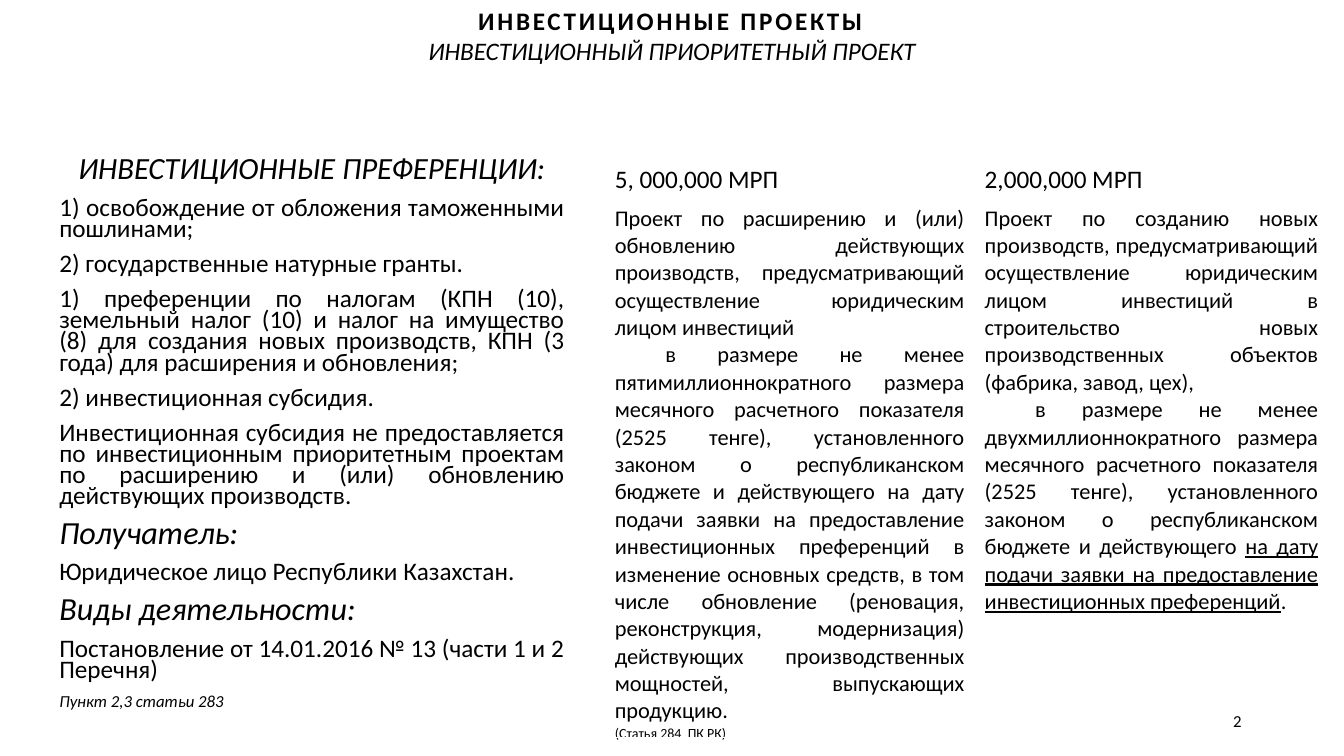
from pptx import Presentation
from pptx.dml.color import RGBColor
from pptx.enum.text import MSO_ANCHOR as Anchor, MSO_AUTO_SIZE as AutoSize, PP_ALIGN as Align
from pptx.util import Pt

COLORS = {"text": "000000"}
FONT = "Calibri"
BODY, CELL, SMALL = 18, 16, 12


def add_run(paragraph, text, size=BODY, bold=False, italic=False, underline=False, tracking=0):
    run = paragraph.add_run()
    run.text = text
    font = run.font
    font.name, font.size = FONT, Pt(size)
    font.bold, font.italic, font.underline = bold, italic, underline
    font.color.rgb = RGBColor.from_string(COLORS["text"])
    if tracking:
        run._r.get_or_add_rPr().set("spc", str(tracking * 100))


class SlideBuilder:
    def __init__(self, slide):
        self.slide = slide

    def fill_frame(self, frame, paragraphs, line_spacing=None, space_before=None):
        """Each paragraph is (alignment, [(text, format), ...])."""
        frame.word_wrap = True
        for index, (align, runs) in enumerate(paragraphs):
            paragraph = frame.add_paragraph() if index else frame.paragraphs[0]
            paragraph.alignment = align
            paragraph.line_spacing = line_spacing
            paragraph.space_before = space_before
            for text, style in runs:
                add_run(paragraph, text, **style)

    def title(self, box, heading, subheading):
        title = self.slide.shapes.title
        title.left, title.top, title.width, title.height = map(Pt, box)
        frame = title.text_frame
        frame.vertical_anchor = Anchor.TOP
        frame.auto_size = AutoSize.SHAPE_TO_FIT_TEXT
        self.fill_frame(frame, [(Align.CENTER, [(heading, dict(bold=True, tracking=2))])])
        paragraph = frame.paragraphs[0]
        paragraph.add_line_break()
        add_run(paragraph, subheading, italic=True)

    def text(self, box, paragraphs, anchor=Anchor.TOP, **spacing):
        frame = self.slide.shapes.add_textbox(*map(Pt, box)).text_frame
        frame.vertical_anchor = anchor
        self.fill_frame(frame, paragraphs, **spacing)

    def table(self, left, top, widths, heights, rows):
        table = self.slide.shapes.add_table(
            len(heights), len(widths), Pt(left), Pt(top), Pt(sum(widths)), Pt(sum(heights))
        ).table
        table.first_row = table.horz_banding = False
        for column, width in zip(table.columns, widths):
            column.width = Pt(width)
        for row, height, contents in zip(table.rows, heights, rows):
            row.height = Pt(height)
            for cell, paragraphs in zip(row.cells, contents):
                cell.fill.background()
                self.fill_frame(cell.text_frame, paragraphs)


def main():
    deck = Presentation()
    deck.slide_width, deck.slide_height = Pt(960), Pt(540)
    builder = SlideBuilder(deck.slides.add_slide(deck.slide_layouts[5]))

    # Title
    builder.title((240, 0, 480, 51), "ИНВЕСТИЦИОННЫЕ ПРОЕКТЫ", "ИНВЕСТИЦИОННЫЙ ПРИОРИТЕТНЫЙ ПРОЕКТ")

    # Preferences, recipient and activities
    plain = {}
    heading = dict(size=23, italic=True)
    preferences = [
        ("1) освобождение от обложения таможенными пошлинами;", plain),
        ("2) государственные натурные гранты.", plain),
        ("1) преференции по налогам (КПН (10), земельный налог (10) и налог на имущество (8) "
         "для создания новых производств, КПН (3 года) для расширения и обновления;", plain),
        ("2) инвестиционная субсидия.", plain),
        ("Инвестиционная субсидия не предоставляется по инвестиционным приоритетным проектам "
         "по расширению и (или) обновлению действующих производств.", plain),
        ("Получатель: ", heading),
        ("Юридическое лицо Республики Казахстан.", plain),
        ("Виды деятельности: ", heading),
        ("Постановление от 14.01.2016 № 13 (части 1 и 2 Перечня) ", plain),
        ("Пункт 2,3 статьи 283", dict(size=SMALL, italic=True)),
    ]
    builder.text(
        (35.3, 110.2, 375, 406),
        [(Align.CENTER, [("ИНВЕСТИЦИОННЫЕ ПРЕФЕРЕНЦИИ:", dict(size=22, italic=True))])]
        + [(Align.JUSTIFY, [line]) for line in preferences],
        line_spacing=0.7, space_before=Pt(10),
    )

    # Slide number
    builder.text((678, 500.5, 216, 28.8), [(Align.RIGHT, [("2", dict(size=SMALL))])], Anchor.MIDDLE)

    # Investment thresholds
    cell = dict(size=CELL)
    expansion = [
        (Align.JUSTIFY, [("Проект по расширению и (или) обновлению действующих производств, "
                          "предусматривающий осуществление юридическим лицом инвестиций ", cell)]),
        (Align.JUSTIFY, [("\tв размере не менее пятимиллионнократного размера месячного расчетного "
                          "показателя (2525 тенге), установленного законом о республиканском бюджете "
                          "и действующего на дату подачи заявки на предоставление инвестиционных "
                          "преференций в изменение основных средств, в том числе обновление "
                          "(реновация, реконструкция, модернизация) действующих производственных "
                          "мощностей, выпускающих продукцию.", cell)]),
        (Align.LEFT, [("(Статья 284  ПК РК)", dict(size=10))]),
    ]
    creation = [
        (Align.JUSTIFY, [("Проект по созданию новых производств, предусматривающий осуществление "
                          "юридическим лицом инвестиций в строительство новых производственных "
                          "объектов (фабрика, завод, цех), ", cell)]),
        (Align.JUSTIFY, [("\tв размере не менее двухмиллионнократного размера месячного расчетного "
                          "показателя (2525 тенге), установленного законом о республиканском бюджете "
                          "и действующего ", cell),
                         ("на дату подачи заявки на предоставление инвестиционных преференций",
                          dict(size=CELL, underline=True)),
                         (".", cell)]),
    ]
    thresholds = [[(Align.LEFT, [(amount, plain)])] for amount in ("5, 000,000 МРП", "2,000,000 МРП")]
    builder.table(432, 113.8, (264.2, 252.7), (27.4, 375.1), [thresholds, [expansion, creation]])

    deck.save("out.pptx")


if __name__ == "__main__":
    main()
